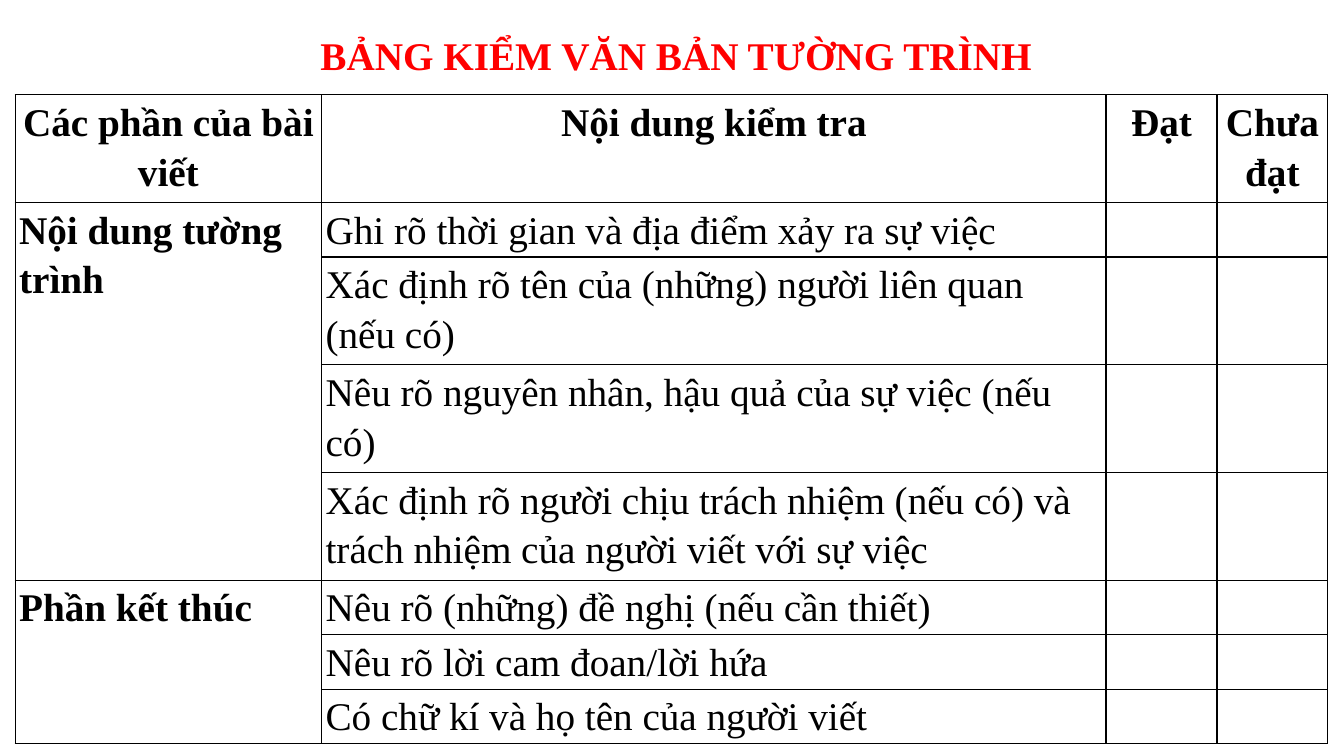
from lxml import etree
from pptx import Presentation
from pptx.dml.color import RGBColor
from pptx.enum.text import MSO_ANCHOR, MSO_AUTO_SIZE, PP_ALIGN
from pptx.oxml.ns import qn
from pptx.util import Inches, Pt

TITLE = "BẢNG KIỂM VĂN BẢN TƯỜNG TRÌNH"
HEADERS = ["Các phần của bài viết", "Nội dung kiểm tra", "Đạt", "Chưa đạt"]
# Each section: name, then (criterion, number of text lines)
SECTIONS = [
    ("Nội dung tường trình", [
        ("Ghi rõ thời gian và địa điểm xảy ra sự việc", 1),
        ("Xác định rõ tên của (những) người liên quan (nếu có)", 2),
        ("Nêu rõ nguyên nhân, hậu quả của sự việc (nếu có)", 2),
        ("Xác định rõ người chịu trách nhiệm (nếu có) và "
         "trách nhiệm của người viết với sự việc", 2),
    ]),
    ("Phần kết thúc", [
        ("Nêu rõ (những) đề nghị (nếu cần thiết)", 1),
        ("Nêu rõ lời cam đoan/lời hứa", 1),
        ("Có chữ kí và họ tên của người viết", 1),
    ]),
]

COLUMN_WIDTHS = [3.04, 7.78, 1.1, 1.1]
ROW_HEIGHTS = {1: 0.54, 2: 1.07}
HEADER_LINES = 2
BLACK = RGBColor(0, 0, 0)
WHITE = RGBColor(255, 255, 255)
RED = RGBColor(255, 0, 0)
LEFT, CENTER = PP_ALIGN.LEFT, PP_ALIGN.CENTER
TOP = MSO_ANCHOR.TOP
NO_AUTOFIT = MSO_AUTO_SIZE.NONE


def write(frame, text, color=BLACK, bold=False, align=LEFT):
    frame.word_wrap = True
    paragraph = frame.paragraphs[0]
    paragraph.alignment = align
    paragraph.line_spacing = 1.15
    paragraph.space_before = Pt(0)
    paragraph.space_after = Pt(10)
    run = paragraph.add_run()
    run.text = text
    run.font.name = "Times New Roman"
    run.font.size = Pt(28)
    run.font.bold = bold
    run.font.color.rgb = color


def style_cell(cell):
    """White fill, narrow margins and a thin black border on every side."""
    cell.margin_left = cell.margin_right = Inches(0.04)
    cell.margin_top = cell.margin_bottom = 0
    cell.vertical_anchor = TOP
    properties = cell._tc.get_or_add_tcPr()
    for side in ("a:lnL", "a:lnR", "a:lnT", "a:lnB"):
        border = etree.SubElement(properties, qn(side), w=str(Pt(1)))
        fill = etree.SubElement(border, qn("a:solidFill"))
        etree.SubElement(fill, qn("a:srgbClr"), val=str(BLACK))
    cell.fill.solid()
    cell.fill.fore_color.rgb = WHITE


def add_title(slide):
    title = slide.shapes.title
    title.left, title.top = Inches(2.63), Inches(0.19)
    title.width, title.height = Inches(8.15), Inches(0.6)
    frame = title.text_frame
    frame.auto_size = NO_AUTOFIT
    frame.vertical_anchor = TOP
    write(frame, TITLE, color=RED, bold=True, align=CENTER)


def add_checklist(slide):
    line_counts = [HEADER_LINES] + [
        lines for _, criteria in SECTIONS for _, lines in criteria]
    heights = [ROW_HEIGHTS[lines] for lines in line_counts]
    table = slide.shapes.add_table(
        len(heights), len(HEADERS), Inches(0.15), Inches(0.94),
        Inches(sum(COLUMN_WIDTHS)), Inches(sum(heights))).table
    table.horz_banding = False
    for column, width in zip(table.columns, COLUMN_WIDTHS):
        column.width = Inches(width)
    for row, height in zip(table.rows, heights):
        row.height = Inches(height)
    for cell in table.iter_cells():
        style_cell(cell)

    for column, header in enumerate(HEADERS):
        write(table.cell(0, column).text_frame, header, bold=True, align=CENTER)
    first = 1
    for section, criteria in SECTIONS:
        last = first + len(criteria) - 1
        section_cell = table.cell(first, 0)
        section_cell.merge(table.cell(last, 0))
        write(section_cell.text_frame, section, bold=True)
        for row, (criterion, _) in enumerate(criteria, first):
            write(table.cell(row, 1).text_frame, criterion)
        first = last + 1


def main():
    presentation = Presentation()
    presentation.slide_width = Inches(13.33)
    presentation.slide_height = Inches(7.5)
    slide = presentation.slides.add_slide(presentation.slide_layouts[5])
    add_title(slide)
    add_checklist(slide)
    presentation.save("out.pptx")


if __name__ == "__main__":
    main()
